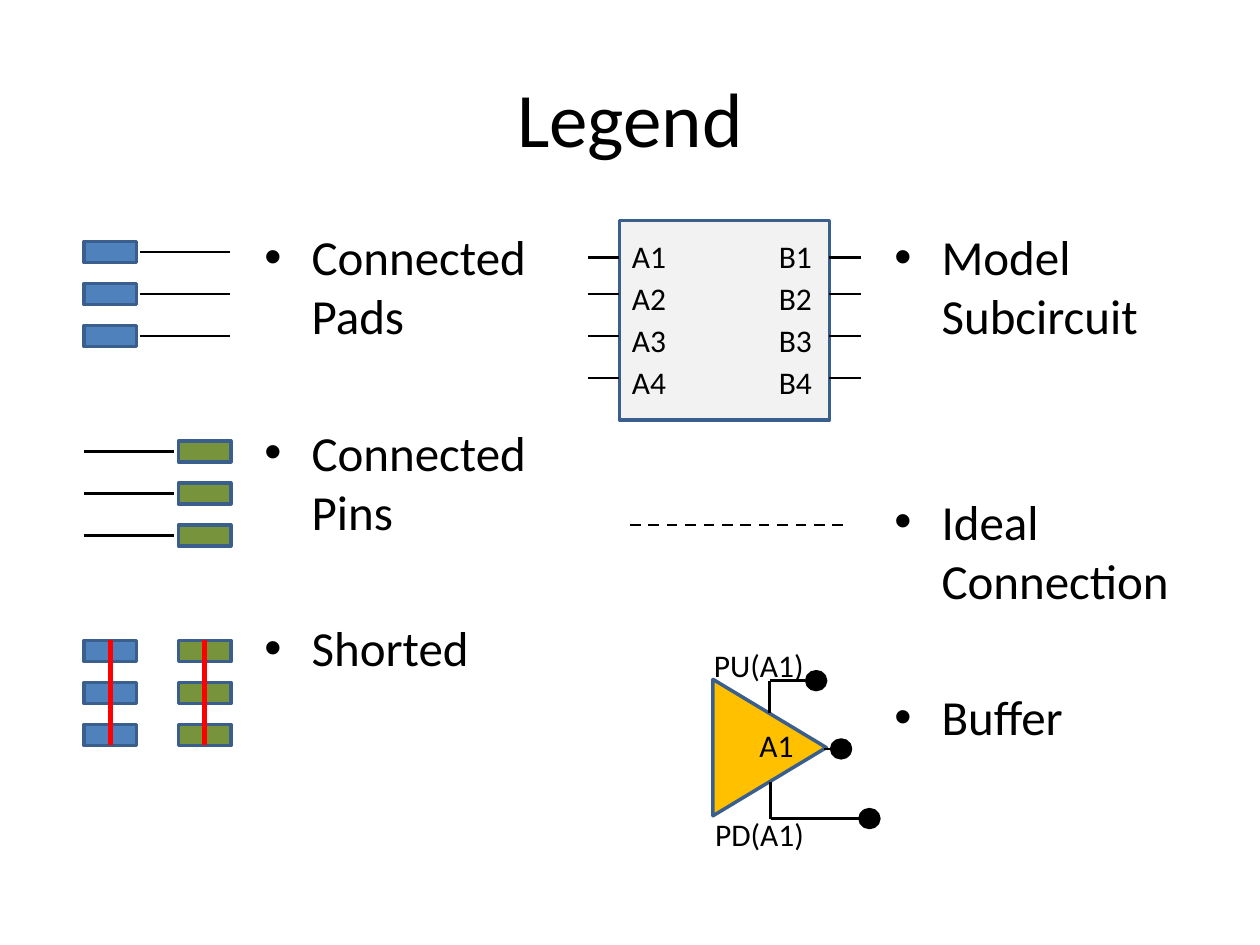
from lxml import etree
from pptx import Presentation
from pptx.dml.color import RGBColor
from pptx.enum.dml import MSO_LINE
from pptx.enum.shapes import MSO_CONNECTOR, MSO_SHAPE
from pptx.enum.text import MSO_ANCHOR, PP_ALIGN
from pptx.oxml.ns import qn
from pptx.util import Inches, Pt

RECT, OVAL, TRIANGLE = MSO_SHAPE.RECTANGLE, MSO_SHAPE.OVAL, MSO_SHAPE.ISOSCELES_TRIANGLE
STRAIGHT, DASH = MSO_CONNECTOR.STRAIGHT, MSO_LINE.DASH
CENTER, MIDDLE = PP_ALIGN.CENTER, MSO_ANCHOR.MIDDLE
TOP_SITE, BOTTOM_SITE = 0, 2

FONT = "Calibri"
BLACK, RED, EDGE = "000000", "FF0000", "3A5F8C"
PAD_BLUE, PIN_GREEN, BLOCK_GREY, BUFFER_GOLD = "4F81BD", "77933C", "F2F2F2", "FFC000"

COLS, ROWS = 120, 90
PAD_W, PAD_H, PAD_PITCH, PAD_COUNT = 5, 2, 4, 3
WIRE_LEN, WIRE_GAP = 8.6, 0.3


def u(cells):
    """Length of a number of grid cells, twelve to the inch."""
    return Inches(cells / 12)


def rgb(value):
    return RGBColor.from_string(value)


def add_shape(s, kind, x, y, w, h, fill, edge=EDGE):
    shape = s.shapes.add_shape(kind, u(x), u(y), u(w), u(h))
    shape.shadow.inherit = False
    shape.fill.solid()
    shape.fill.fore_color.rgb = rgb(fill)
    shape.line.color.rgb = rgb(edge)
    shape.line.width = Pt(2)
    return shape


def add_line(s, x1, y1, x2, y2, color=BLACK, width=1.5, dash=None):
    line = s.shapes.add_connector(STRAIGHT, u(x1), u(y1), u(x2), u(y2))
    line.line.color.rgb = rgb(color)
    line.line.width = Pt(width)
    if dash:
        line.line.dash_style = dash
    etree.SubElement(line._element.spPr, qn("a:effectLst"))
    return line


def add_text(s, x, y, w, h, lines, size, wrap=True, align=None, anchor=None, after=0):
    """Text box with one paragraph for each line; returns its paragraphs."""
    tf = s.shapes.add_textbox(u(x), u(y), u(w), u(h)).text_frame
    tf.word_wrap = wrap
    if anchor is not None:
        tf.vertical_anchor = anchor
    for i, text in enumerate(lines):
        p = tf.add_paragraph() if i else tf.paragraphs[0]
        p.space_after = Pt(after)
        if align is not None:
            p.alignment = align
        r = p.add_run()
        r.text = text
        r.font.name, r.font.size = FONT, Pt(size)
        r.font.color.rgb = rgb(BLACK)
    return tf.paragraphs


def bullet_list(s, x, y, w, h, items):
    """Items are pairs of text and space before in points."""
    paragraphs = add_text(s, x, y, w, h, [text for text, _ in items], 28)
    for p, (_, before) in zip(paragraphs, items):
        p.space_before = Pt(before)
        pPr = p._p.get_or_add_pPr()
        pPr.set("marL", str(Inches(0.375)))
        pPr.set("indent", str(-Inches(0.375)))
        etree.SubElement(pPr, qn("a:buFont")).set("typeface", "Arial")
        etree.SubElement(pPr, qn("a:buChar")).set("char", "•")


def pad_column(s, x, y, fill):
    return [add_shape(s, RECT, x, y + i * PAD_PITCH, PAD_W, PAD_H, fill)
            for i in range(PAD_COUNT)]


def wired_pads(s, x, y, w, fill, pads_left):
    pad_column(s, x if pads_left else x + w - PAD_W, y, fill)
    wire_x = x + PAD_W + WIRE_GAP if pads_left else x
    for i in range(PAD_COUNT):
        wire_y = y + PAD_H / 2 + i * PAD_PITCH
        add_line(s, wire_x, wire_y, wire_x + WIRE_LEN, wire_y)


def shorted_pads(s, x, y, fill):
    pads = pad_column(s, x, y, fill)
    mid = x + PAD_W / 2
    short = add_line(s, mid, y, mid, y + 2 * PAD_PITCH + PAD_H, RED, 3)
    short.begin_connect(pads[0], TOP_SITE)
    short.end_connect(pads[-1], BOTTOM_SITE)


def subcircuit(s, x, y, w, h):
    add_shape(s, RECT, x, y, w, h, BLOCK_GREY)
    lead, label_w = 3, 6
    for side, lead_x, label_x in (("A", x - lead, x), ("B", x + w, x + w - label_w)):
        for row in (3.5, 7, 11, 15):
            add_line(s, lead_x, y + row, lead_x + lead, y + row)
        names = [f"{side}{n}" for n in range(1, 5)]
        add_text(s, label_x, y + 1, label_w, 16.8, names, 18, after=2.4)


def buffer(s, x, y, w, h):
    """Buffer symbol whose triangle fills the box; parts are shares of the box."""
    def at(fx, fy):
        return x + fx * w, y + fy * h

    triangle = add_shape(s, TRIANGLE, x + (w - h) / 2, y + (h - w) / 2, h, w, BUFFER_GOLD)
    triangle.rotation = 90
    for start, end in (((0.5, 0.01), (0.5, 0.25)), ((0.5, 0.01), (0.81, 0.01)),
                       ((0.51, 0.75), (0.51, 1.02)), ((0.51, 1.02), (1.3, 1.02)),
                       ((0.98, 0.51), (1.11, 0.51))):
        add_line(s, *at(*start), *at(*end))
    dot_w, dot_h = 1.8, 1.7
    for center in ((0.91, 0.01), (1.13, 0.51), (1.38, 1.02)):
        cx, cy = at(*center)
        add_shape(s, OVAL, cx - dot_w / 2, cy - dot_h / 2, dot_w, dot_h, BLACK, BLACK)
    for text, corner, label_w in (("PU(A1)", (-0.1, -0.29), 11), ("PD(A1)", (-0.09, 0.95), 11),
                                  ("A1", (0.3, 0.3), 5.8)):
        add_text(s, *at(*corner), label_w, 4.8, [text], 18, wrap=False)


def main():
    prs = Presentation()
    prs.slide_width, prs.slide_height = u(COLS), u(ROWS)
    s = prs.slides.add_slide(prs.slide_layouts[6])

    add_text(s, 6, 3.6, 108, 15, ["Legend"], 44, align=CENTER, anchor=MIDDLE)
    bullet_list(s, 24, 21, 31, 59.4,
                [("Connected Pads", 0), ("Connected Pins", 44.5), ("Shorted", 44.5)])
    bullet_list(s, 84, 21, 29, 59.4,
                [("Model Subcircuit", 0), ("Ideal Connection", 84), ("Buffer", 44.5)])

    wired_pads(s, 8, 23, 14, PAD_BLUE, pads_left=True)
    wired_pads(s, 8, 42, 14, PIN_GREEN, pads_left=False)
    shorted_pads(s, 8, 61, PAD_BLUE)
    shorted_pads(s, 17, 61, PIN_GREEN)

    subcircuit(s, 59, 21, 20, 19)
    add_line(s, 60, 50, 81, 50, dash=DASH)
    buffer(s, 67.9, 64.7, 10.8, 13)

    prs.save("out.pptx")


if __name__ == "__main__":
    main()
